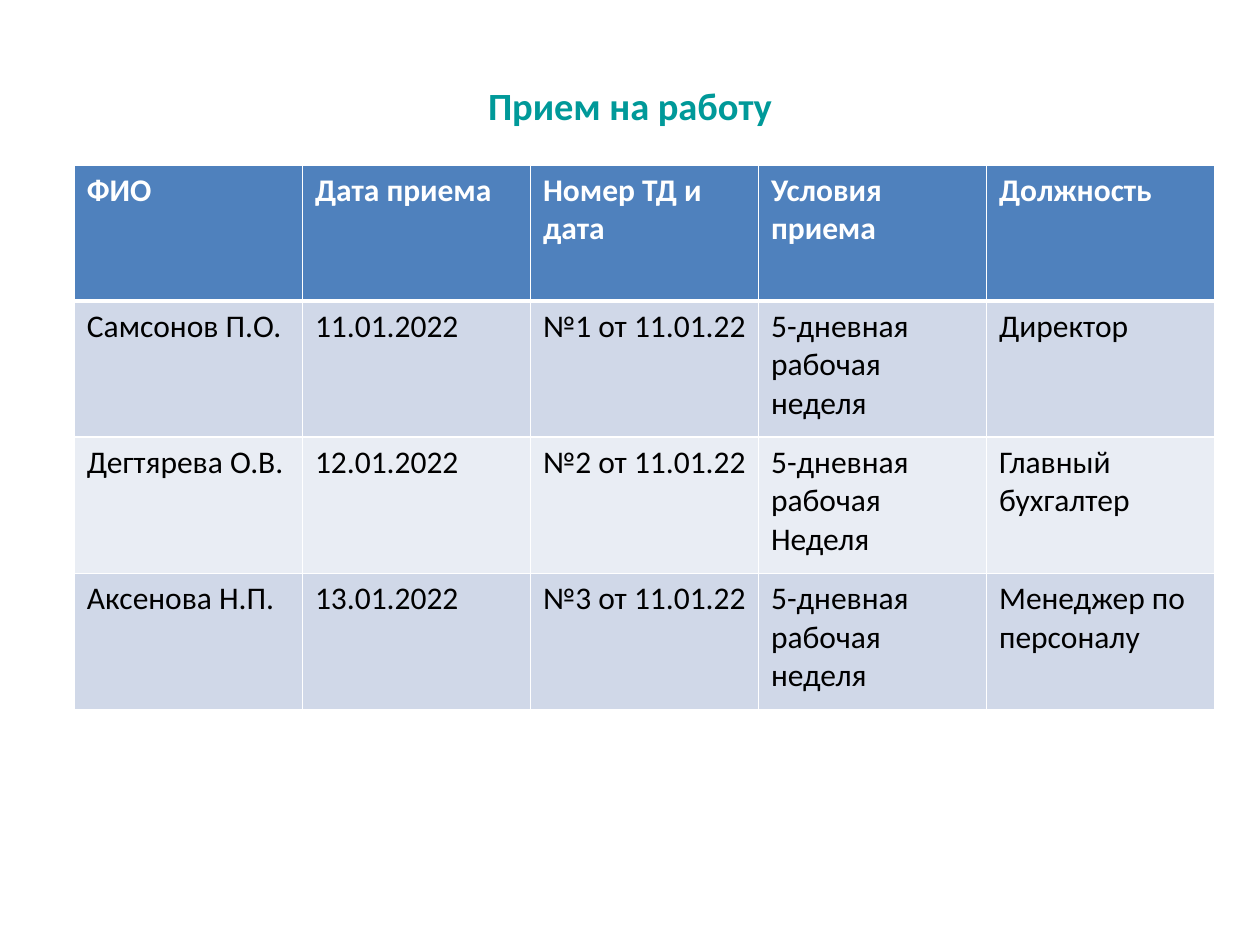
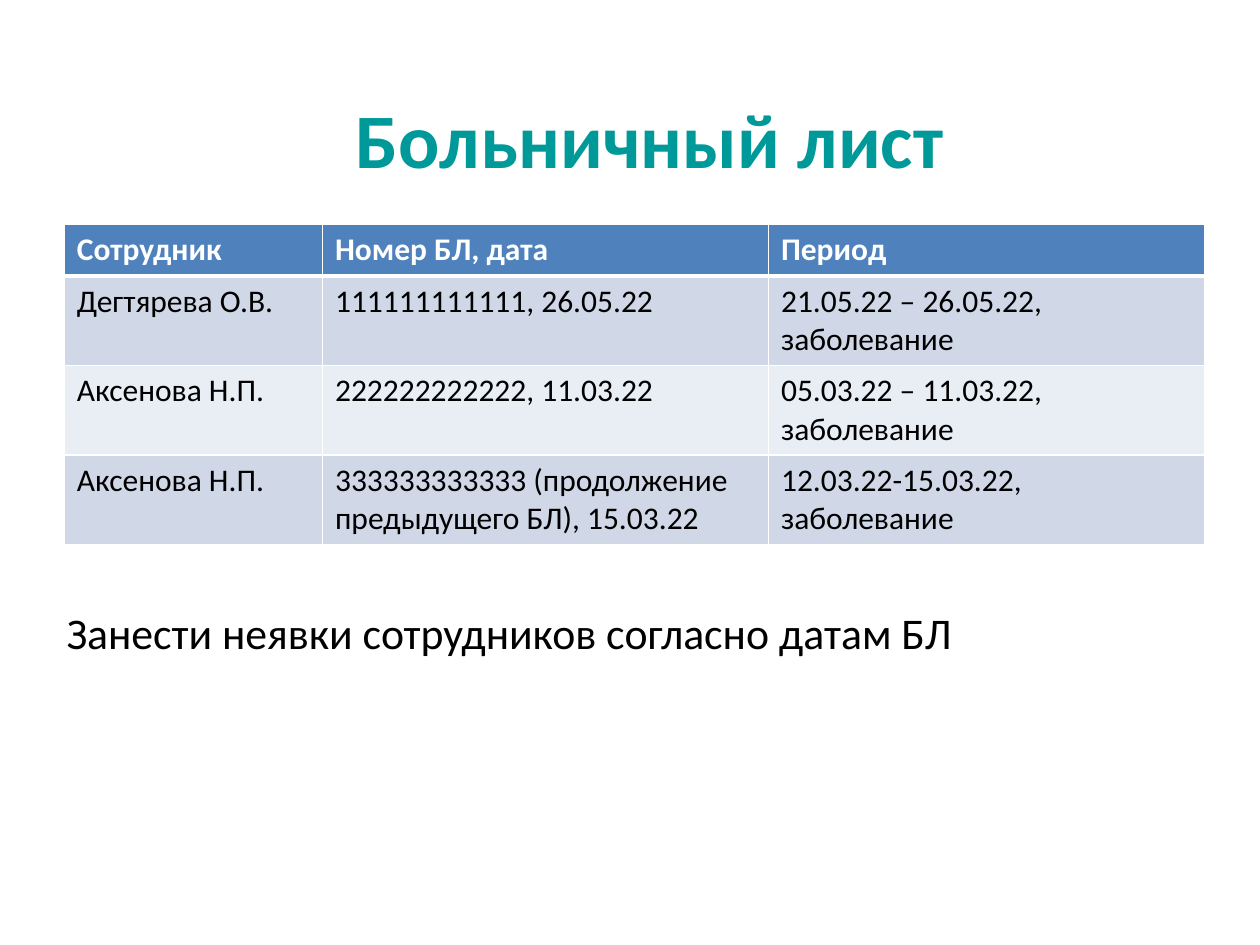
from dataclasses import dataclass

from lxml import etree
from pptx import Presentation
from pptx import util as u
from pptx.dml.color import RGBColor
from pptx.enum import text
from pptx.oxml import ns


@dataclass(frozen=True)
class Theme:
    """Colours, font and type sizes shared by the slides."""
    font: str = "Calibri"
    title: str = "009999"
    header: str = "4F81BD"
    bands: tuple = ("D0D8E8", "E9EDF4")
    light: str = "FFFFFF"
    dark: str = "000000"
    title_small: int = 22
    title_large: int = 44
    cell: int = 18
    note: int = 25
    thin: int = 1
    thick: int = 3


THEME = Theme()


def write(frame, content, *, size, color, bold=False, align=text.PP_ALIGN.LEFT):
    """Fill a text frame, one paragraph per line of content."""
    frame.word_wrap = True
    for index, line in enumerate(content.split("\n")):
        para = frame.paragraphs[0] if index == 0 else frame.add_paragraph()
        para.alignment = align
        span = para.add_run()
        span.text = line
        span.font.name = THEME.font
        span.font.size = u.Pt(size)
        span.font.bold = bold
        span.font.color.rgb = RGBColor.from_string(color)


def add_page(deck, title, place, size):
    """Add a title-only slide with a centred title at the given place."""
    page = deck.slides.add_slide(deck.slide_layouts[5])
    box = page.shapes.title
    box.left, box.top, box.width, box.height = map(u.Inches, place)
    frame = box.text_frame
    frame.auto_size = text.MSO_AUTO_SIZE.NONE
    frame.vertical_anchor = text.MSO_ANCHOR.MIDDLE
    write(frame, title, size=size, color=THEME.title, bold=True,
          align=text.PP_ALIGN.CENTER)
    return page


def add_borders(cell, **widths):
    """Draw light cell borders with widths in points by side."""
    properties = cell._tc.get_or_add_tcPr()
    for side in "LRTB":
        line = etree.SubElement(properties, ns.qn(f"a:ln{side}"),
                                w=str(u.Pt(widths.get(side, THEME.thin))))
        fill = etree.SubElement(line, ns.qn("a:solidFill"))
        etree.SubElement(fill, ns.qn("a:srgbClr"), val=THEME.light)


def format_cell(cell, content, row):
    """Style a cell as header or as part of a colour band."""
    is_header = row == 0
    edges = {0: {"B": THEME.thick}, 1: {"T": THEME.thick}}
    add_borders(cell, **edges.get(row, {}))
    fill = THEME.header if is_header else THEME.bands[(row - 1) % 2]
    cell.fill.solid()
    cell.fill.fore_color.rgb = RGBColor.from_string(fill)
    write(cell.text_frame, content, size=THEME.cell, bold=is_header,
          color=THEME.light if is_header else THEME.dark)


def add_grid(page, rows, left, top, widths, heights):
    """Add a banded table whose first row is the header."""
    table = page.shapes.add_table(
        len(rows), len(widths), u.Inches(left), u.Inches(top),
        u.Inches(sum(widths)), u.Inches(sum(heights))).table
    for column, width in zip(table.columns, widths):
        column.width = u.Inches(width)
    for index, (values, height) in enumerate(zip(rows, heights)):
        table.rows[index].height = u.Inches(height)
        for cell, value in zip(table.rows[index].cells, values):
            format_cell(cell, value, index)


def add_note(page, content, place):
    """Add a justified note below a table."""
    box = page.shapes.add_textbox(*map(u.Inches, place))
    write(box.text_frame, content, size=THEME.note, color=THEME.dark,
          align=text.PP_ALIGN.JUSTIFY)


def add_hiring(deck):
    """Build the slide on hiring."""
    page = add_page(deck, "Прием на работу", (0.75, 0.44, 8.5, 0.79),
                    THEME.title_small)
    rows = [
        ("ФИО", "Дата приема", "Номер ТД и дата", "Условия приема", "Должность"),
        ("Самсонов П.О.", "11.01.2022", "№1 от 11.01.22",
         "5-дневная рабочая неделя", "Директор"),
        ("Дегтярева О.В.", "12.01.2022", "№2 от 11.01.22",
         "5-дневная рабочая\nНеделя", "Главный бухгалтер"),
        ("Аксенова Н.П.", "13.01.2022", "№3 от 11.01.22",
         "5-дневная рабочая\nнеделя", "Менеджер по персоналу"),
    ]
    add_grid(page, rows, 0.59, 1.31, [1.81] * 5, [1.08] * 4)


def add_sick_leave(deck):
    """Build the slide on sick leave."""
    page = add_page(deck, "Больничный лист", (0.67, 0.29, 8.98, 1.61),
                    THEME.title_large)
    rows = [
        ("Сотрудник", "Номер БЛ, дата", "Период"),
        ("Дегтярева О.В.", "111111111111, 26.05.22",
         "21.05.22 – 26.05.22, заболевание"),
        ("Аксенова Н.П.", "222222222222, 11.03.22",
         "05.03.22 – 11.03.22, заболевание"),
        ("Аксенова Н.П.", "333333333333 (продолжение предыдущего БЛ), 15.03.22",
         "12.03.22-15.03.22, заболевание"),
    ]
    add_grid(page, rows, 0.51, 1.78, [2.05, 3.54, 3.46], [0.41] + [0.7] * 3)
    add_note(page, "Занести неявки сотрудников согласно датам БЛ",
             (0.43, 4.76, 9.06, 0.52))


def main():
    """Build and save the deck."""
    deck = Presentation()
    deck.slide_width, deck.slide_height = u.Inches(10), u.Inches(7.5)
    add_hiring(deck)
    add_sick_leave(deck)
    deck.save("out.pptx")


if __name__ == "__main__":
    main()
